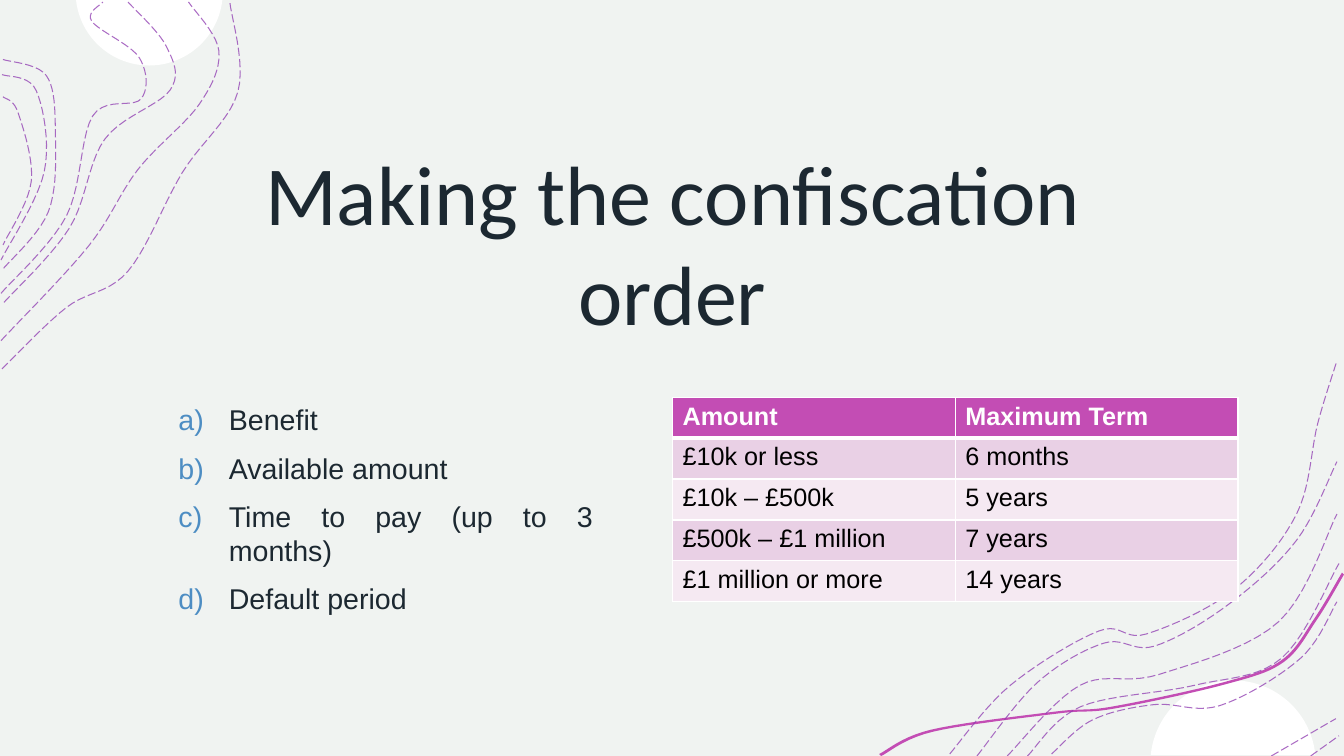
from math import asin, cos, pi, sin

from lxml.etree import SubElement
from pptx import Presentation
from pptx.dml.color import RGBColor
from pptx.enum.dml import MSO_LINE
from pptx.enum.text import MSO_ANCHOR, MSO_AUTO_SIZE, PP_ALIGN
from pptx.oxml.ns import qn
from pptx.util import Inches, Pt

PALE = RGBColor(0xF0, 0xF3, 0xF1)
WHITE = RGBColor(0xFF, 0xFF, 0xFF)
BLACK = RGBColor(0x00, 0x00, 0x00)
MAGENTA = RGBColor(0xC3, 0x4D, 0xB4)
PURPLE = RGBColor(0x8F, 0x3B, 0xB1)
INK = RGBColor(0x1C, 0x28, 0x31)
BLUE = RGBColor(0x4D, 0x8D, 0xC3)
BAND_DARK = RGBColor(0xE9, 0xD0, 0xE5)
BAND_LIGHT = RGBColor(0xF5, 0xE9, 0xF2)

CURVE_STEPS = 10
RIBBON_WIDTH = 0.02

CONTOURS = [
    [(0.02, 3.66), (0.66, 3.05), (1.27, 2.69), (1.81, 1.71), (2.36, 0.91), (2.28, 0.02)],
    [(0.01, 3.38), (0.88, 2.44), (1.37, 1.68), (1.98, 1.03), (2.17, 0.5), (1.87, 0.02)],
    [(1.27, 0.02), (1.65, 0.46), (1.69, 0.89), (1.04, 1.38), (0.69, 2.26), (0.03, 3.01)],
    [(0.01, 2.91), (0.66, 2.14), (0.92, 1.15), (1.4, 0.98), (1.38, 0.57), (0.91, 0.21),
     (1.02, 0.02)],
    [(0.03, 0.59), (0.46, 0.75), (0.55, 1.32), (0.48, 2.1), (0.02, 2.68)],
    [(0.02, 0.74), (0.36, 0.9), (0.44, 1.7), (0.01, 2.58)],
    [(0.03, 0.96), (0.18, 1.12), (0.31, 1.8), (0.03, 2.43)],
    [(9.42, 7.48), (10.02, 6.8), (10.9, 6.26), (11.37, 6.29), (12.24, 5.85), (12.86, 5.1),
     (13.07, 4.2), (13.26, 3.58)],
    [(9.69, 7.5), (10.29, 6.77), (10.95, 6.38), (11.45, 6.41), (12.18, 6), (12.86, 5.36),
     (13.26, 4.58)],
    [(13, 7.5), (13.28, 7.3)],
    [(12.61, 7.5), (13.25, 7.13)],
    [(10.43, 7.48), (10.84, 7.14), (11.45, 6.99), (12.1, 7), (12.9, 6.53), (13.26, 5.97)],
    [(10.19, 7.5), (10.72, 7.01), (11.84, 6.8), (12.71, 6.53), (13.28, 5.59)],
    [(9.99, 7.5), (10.71, 6.8), (11.5, 6.69), (12.68, 6.17), (13.26, 5.1)],
]

RIBBON = [(8.74, 7.5), (9.25, 7.26), (10.48, 7.08), (11.05, 7.03), (12.15, 6.79),
          (12.73, 6.57), (13.06, 6.15), (13.33, 5.7)]

ORDER_CONTENTS = ["Benefit", "Available amount", "Time to pay (up to 3 months)", "Default period"]
DEFAULT_TERMS = [
    ("Amount", "Maximum Term"),
    ("£10k or less", "6 months"),
    ("£10k – £500k", "5 years"),
    ("£500k – £1 million", "7 years"),
    ("£1 million or more", "14 years"),
]


def smooth(anchors):
    padded = [anchors[0], *anchors, anchors[-1]]
    points = [anchors[0]]
    for a, b, c, d in zip(padded, padded[1:], padded[2:], padded[3:]):
        for step in range(1, CURVE_STEPS + 1):
            t = step / CURVE_STEPS
            points.append(tuple(
                q + t * (r - p) / 2 + t * t * (p - 2.5 * q + 2 * r - s / 2)
                + t ** 3 * (3 * q - p - 3 * r + s) / 2
                for p, q, r, s in zip(a, b, c, d)))
    return points


def add_outline(slide, points, close):
    corners = [(Inches(x), Inches(y)) for x, y in points]
    builder = slide.shapes.build_freeform(*corners[0])
    builder.add_line_segments(corners[1:], close=close)
    shape = builder.convert_to_shape()
    shape.shadow.inherit = False
    return shape


def add_filled(slide, points, color):
    shape = add_outline(slide, points, True)
    shape.fill.solid()
    shape.fill.fore_color.rgb = color
    shape.line.fill.background()


def add_contour(slide, anchors):
    shape = add_outline(slide, smooth(anchors), False)
    shape.fill.background()
    shape.line.width = Pt(0.75)
    shape.line.color.rgb = PURPLE
    shape.line.dash_style = MSO_LINE.LONG_DASH
    color = shape.element.spPr.find(".//" + qn("a:ln")).find(".//" + qn("a:srgbClr"))
    SubElement(color, qn("a:alpha"), val="75000")


def add_ribbon(slide):
    lower = smooth(RIBBON)
    upper = [(x - RIBBON_WIDTH, y - RIBBON_WIDTH) for x, y in reversed(lower)]
    add_filled(slide, lower + upper, MAGENTA)


def add_cap(slide, center_x, center_y, radius, edge_y, direction):
    tilt = asin(abs(edge_y - center_y) / radius)
    angles = [tilt + (pi - 2 * tilt) * step / 48 for step in range(49)]
    add_filled(slide, [(center_x + radius * cos(angle), center_y + direction * radius * sin(angle))
                       for angle in angles], WHITE)


def add_run(paragraph, text, font_name, size, color, bold=False):
    run = paragraph.add_run()
    run.text = text
    run.font.name = font_name
    run.font.size = Pt(size)
    run.font.color.rgb = color
    run.font.bold = bold


def place(slide, placeholder, left, top, width, height, anchor):
    placeholder.left, placeholder.top = Inches(left), Inches(top)
    placeholder.width, placeholder.height = Inches(width), Inches(height)
    frame = placeholder.text_frame
    frame.word_wrap = True
    frame.auto_size = MSO_AUTO_SIZE.NONE
    frame.vertical_anchor = anchor
    slide.shapes.element.append(placeholder.element)
    return frame


def fill_title(slide):
    frame = place(slide, slide.shapes.title, 1.67, 0.84, 10, 2.61, MSO_ANCHOR.BOTTOM)
    paragraph = frame.paragraphs[0]
    paragraph.alignment = PP_ALIGN.CENTER
    add_run(paragraph, "Making the confiscation order", "Calibri", 60, INK)


def add_letter_bullet(paragraph):
    properties = paragraph._p.get_or_add_pPr()
    properties.set("marL", str(Inches(0.5)))
    properties.set("indent", str(Inches(-0.5)))
    color = SubElement(properties, qn("a:buClr"))
    SubElement(color, qn("a:srgbClr"), val=str(BLUE))
    SubElement(properties, qn("a:buFont"), typeface="Arial")
    SubElement(properties, qn("a:buAutoNum"), type="alphaLcParenR")


def fill_list(slide):
    frame = place(slide, slide.placeholders[1], 1.67, 3.94, 4.31, 2.03, MSO_ANCHOR.TOP)
    for index, item in enumerate(ORDER_CONTENTS):
        paragraph = frame.add_paragraph() if index else frame.paragraphs[0]
        paragraph.alignment = PP_ALIGN.JUSTIFY
        paragraph.space_before = Pt(10)
        add_letter_bullet(paragraph)
        add_run(paragraph, item, "Arial", 20.4, INK)


def set_borders(cell, top, bottom):
    properties = cell._tc.get_or_add_tcPr()
    for side, width in (("L", 1), ("R", 1), ("T", top), ("B", bottom)):
        line = SubElement(properties, qn(f"a:ln{side}"), w=str(Pt(width)))
        fill = SubElement(line, qn("a:solidFill"))
        SubElement(fill, qn("a:srgbClr"), val=str(WHITE))


def add_terms_table(slide):
    table = slide.shapes.add_table(len(DEFAULT_TERMS), 2, Inches(6.67), Inches(3.94),
                                   Inches(5.61), Inches(2.03)).table
    for row, texts in enumerate(DEFAULT_TERMS):
        header = row == 0
        for column, text in enumerate(texts):
            cell = table.cell(row, column)
            set_borders(cell, 3 if row == 1 else 1, 3 if header else 1)
            cell.fill.solid()
            cell.fill.fore_color.rgb = MAGENTA if header else BAND_DARK if row % 2 else BAND_LIGHT
            add_run(cell.text_frame.paragraphs[0], text, "Arial", 18,
                    WHITE if header else BLACK, header)


def main():
    presentation = Presentation()
    presentation.slide_width = Inches(13.33)
    presentation.slide_height = Inches(7.5)
    slide = presentation.slides.add_slide(presentation.slide_layouts[0])
    slide.background.fill.solid()
    slide.background.fill.fore_color.rgb = PALE
    add_cap(slide, 1.48, -0.08, 0.73, 0, 1)
    add_cap(slide, 12.23, 7.57, 0.82, 7.49, -1)
    add_ribbon(slide)
    for contour in CONTOURS:
        add_contour(slide, contour)
    fill_title(slide)
    fill_list(slide)
    add_terms_table(slide)
    presentation.save("out.pptx")


if __name__ == "__main__":
    main()
